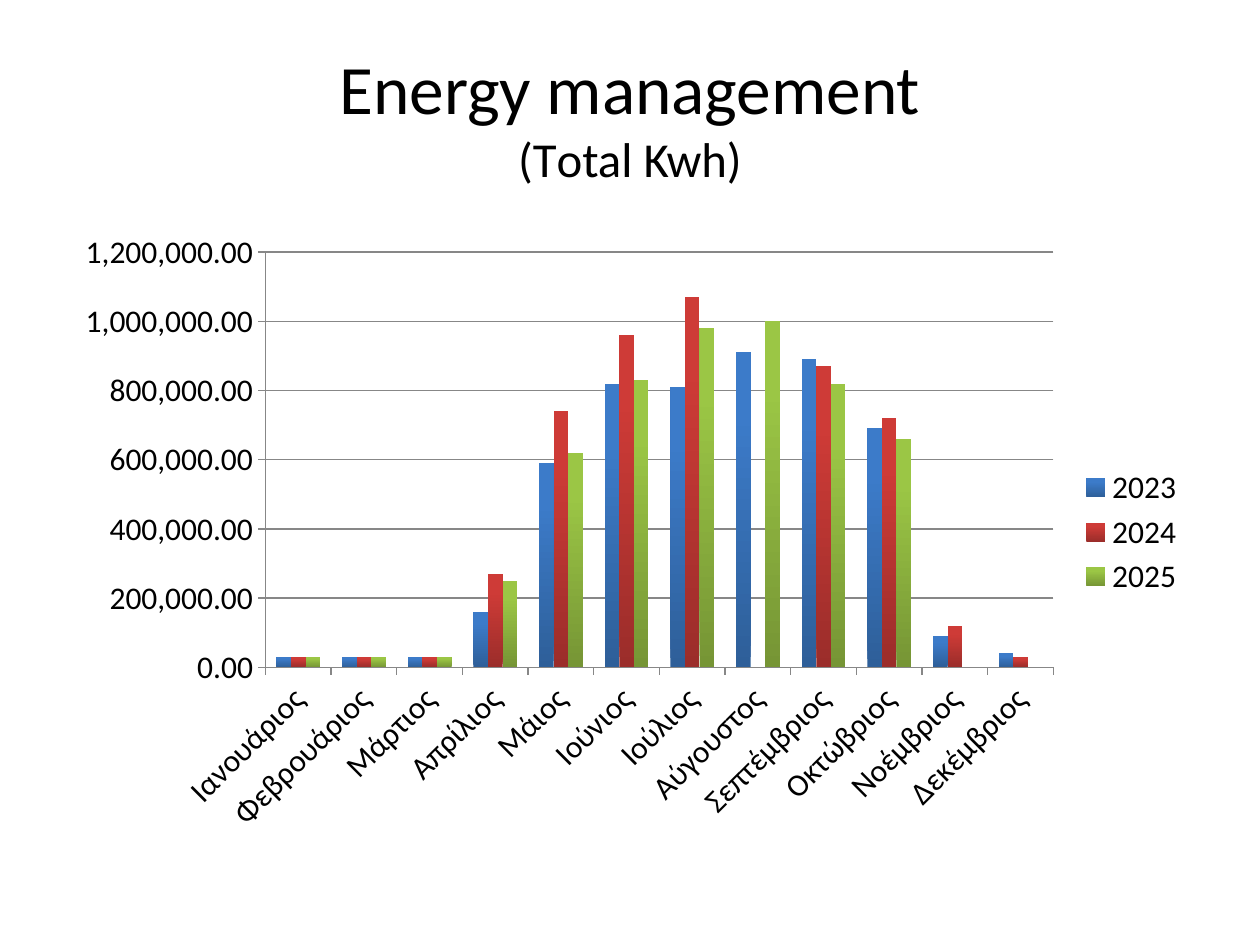
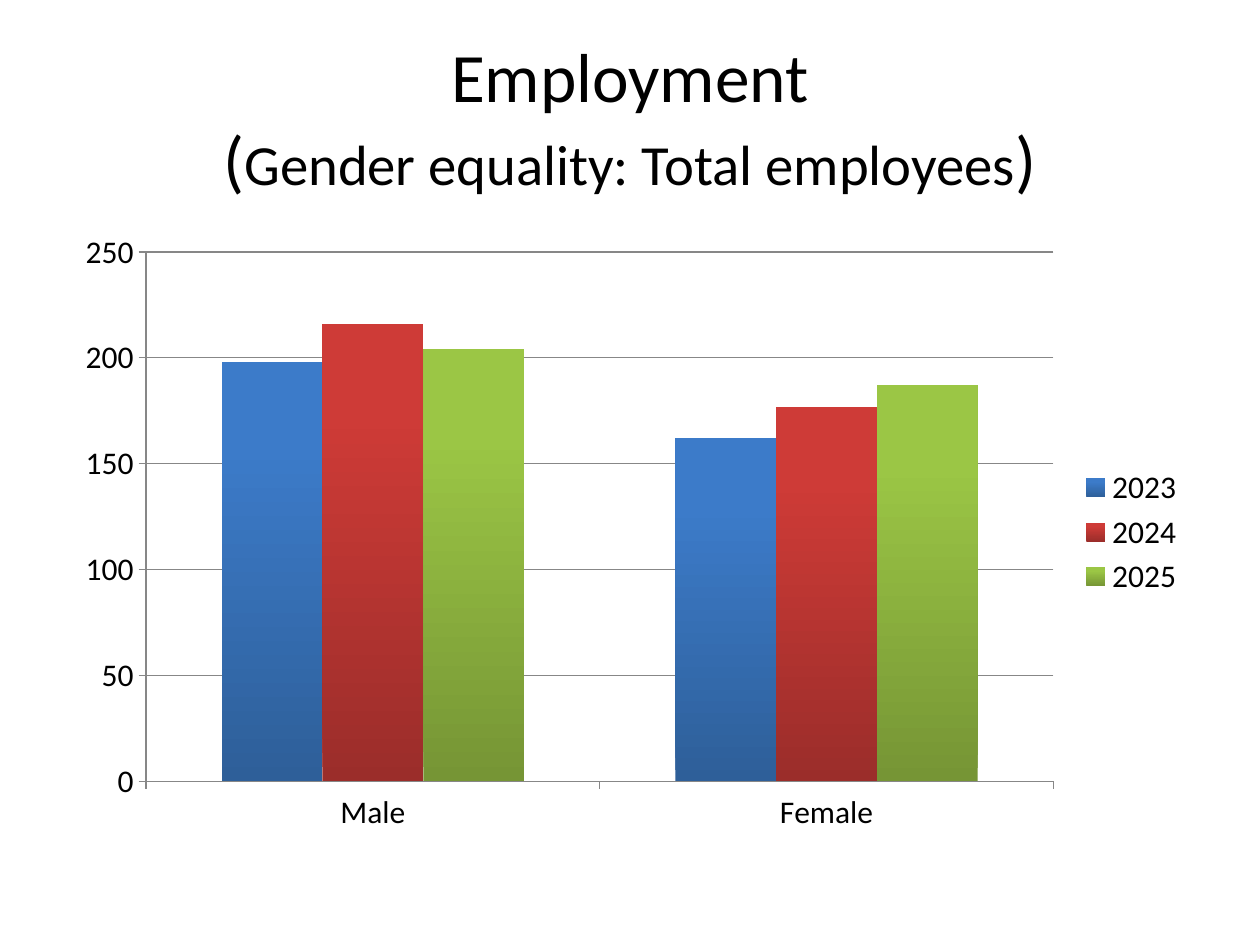
from dataclasses import dataclass

from pptx import Presentation
from pptx.chart.data import CategoryChartData
from pptx.dml.color import RGBColor
from pptx.enum import chart as charts, text
from pptx.util import Inches, Pt


@dataclass(frozen=True)
class Theme:
    font: str = "Calibri"
    ink: str = "000000"
    grid: str = "878787"
    # One (bottom, top) gradient pair per year
    bars: tuple = (("2E5F99", "3C7BC9"), ("9B2D2A", "CE3B37"), ("769535", "9BC645"))
    title_size: float = 39.6
    wide_subtitle_size: float = 32.4
    small_subtitle_size: float = 27.9
    chart_size: float = 18


THEME = Theme()
YEARS = ("2023", "2024", "2025")

MONTHS = ("Ιανουάριος", "Φεβρουάριος", "Μάρτιος", "Απρίλιος", "Μάιος", "Ιούνιος",
          "Ιούλιος", "Αύγουστος", "Σεπτέμβριος", "Οκτώβριος", "Νοέμβριος", "Δεκέμβριος")
ENERGY = (
    (30000, 30000, 30000, 160000, 590000, 820000,
     810000, 910000, 890000, 690000, 90000, 40000),
    (30000, 30000, 30000, 270000, 740000, 960000,
     1070000, 0, 870000, 720000, 120000, 30000),
    (30000, 30000, 30000, 250000, 620000, 830000,
     980000, 1000000, 820000, 660000, None, None),
)
GENDERS = ("Male", "Female")
EMPLOYEES = ((198, 162), (216, 177), (204, 187))


def style_font(font, size):
    font.name = THEME.font
    font.size = Pt(size)
    font.color.rgb = RGBColor.from_string(THEME.ink)


def add_title(page, *lines):
    """Centred title; each line is a list of (wording, size) spans."""
    box = page.shapes.add_textbox(Inches(0.5), Inches(0.3), Inches(9), Inches(1.25))
    frame = box.text_frame
    frame.word_wrap = True
    frame.vertical_anchor = text.MSO_ANCHOR.MIDDLE
    para = frame.paragraphs[0]
    para.alignment = text.PP_ALIGN.CENTER
    for number, line in enumerate(lines):
        if number:
            para.add_line_break()
        for wording, size in line:
            span = para.add_run()
            span.text = wording
            style_font(span.font, size)


def style_axis(axis):
    axis.major_tick_mark = charts.XL_TICK_MARK.OUTSIDE
    axis.minor_tick_mark = charts.XL_TICK_MARK.NONE
    style_line(axis.format.line)


def style_line(line):
    line.color.rgb = RGBColor.from_string(THEME.grid)
    line.width = Pt(0.75)


def fill_bars(series, bottom, top):
    fill = series.format.fill
    fill.gradient()
    fill.gradient_angle = 90
    for stop, color in zip(fill.gradient_stops, (bottom, top)):
        stop.color.rgb = RGBColor.from_string(color)
    fill.gradient_stops[1].position = 0.8


def add_yearly_chart(page, categories, yearly_values, number_format):
    data = CategoryChartData(number_format=number_format)
    data.categories = categories
    for year, values in zip(YEARS, yearly_values):
        data.add_series(year, values)
    chart = page.shapes.add_chart(
        charts.XL_CHART_TYPE.COLUMN_CLUSTERED,
        Inches(0.5), Inches(1.75), Inches(9), Inches(4.95), data).chart
    chart.has_title = False
    style_font(chart.font, THEME.chart_size)

    # Legend
    chart.has_legend = True
    chart.legend.position = charts.XL_LEGEND_POSITION.RIGHT
    chart.legend.include_in_layout = False

    # Axes and grid
    style_axis(chart.category_axis)
    style_axis(chart.value_axis)
    chart.value_axis.has_major_gridlines = True
    style_line(chart.value_axis.major_gridlines.format.line)
    labels = chart.value_axis.tick_labels
    labels.number_format = number_format
    labels.number_format_is_linked = False

    # Columns
    plot = chart.plots[0]
    plot.vary_by_categories = False
    plot.gap_width = 150
    plot.overlap = 0
    for series, colors in zip(plot.series, THEME.bars):
        fill_bars(series, *colors)


def add_page(deck):
    return deck.slides.add_slide(deck.slide_layouts[6])


def main():
    deck = Presentation()
    deck.slide_width, deck.slide_height = Inches(10), Inches(7.5)

    # Energy use by month
    page = add_page(deck)
    add_title(page,
              [("Energy management", THEME.title_size)],
              [("(Τotal Kwh)", THEME.small_subtitle_size)])
    add_yearly_chart(page, MONTHS, ENERGY, "#,##0.00")

    # Employees by gender
    page = add_page(deck)
    add_title(page,
              [("Employment", THEME.title_size)],
              [("(", THEME.title_size),
               ("Gender equality: Total employees", THEME.wide_subtitle_size),
               (")", THEME.title_size)])
    add_yearly_chart(page, GENDERS, EMPLOYEES, "General")

    deck.save("out.pptx")


if __name__ == "__main__":
    main()
